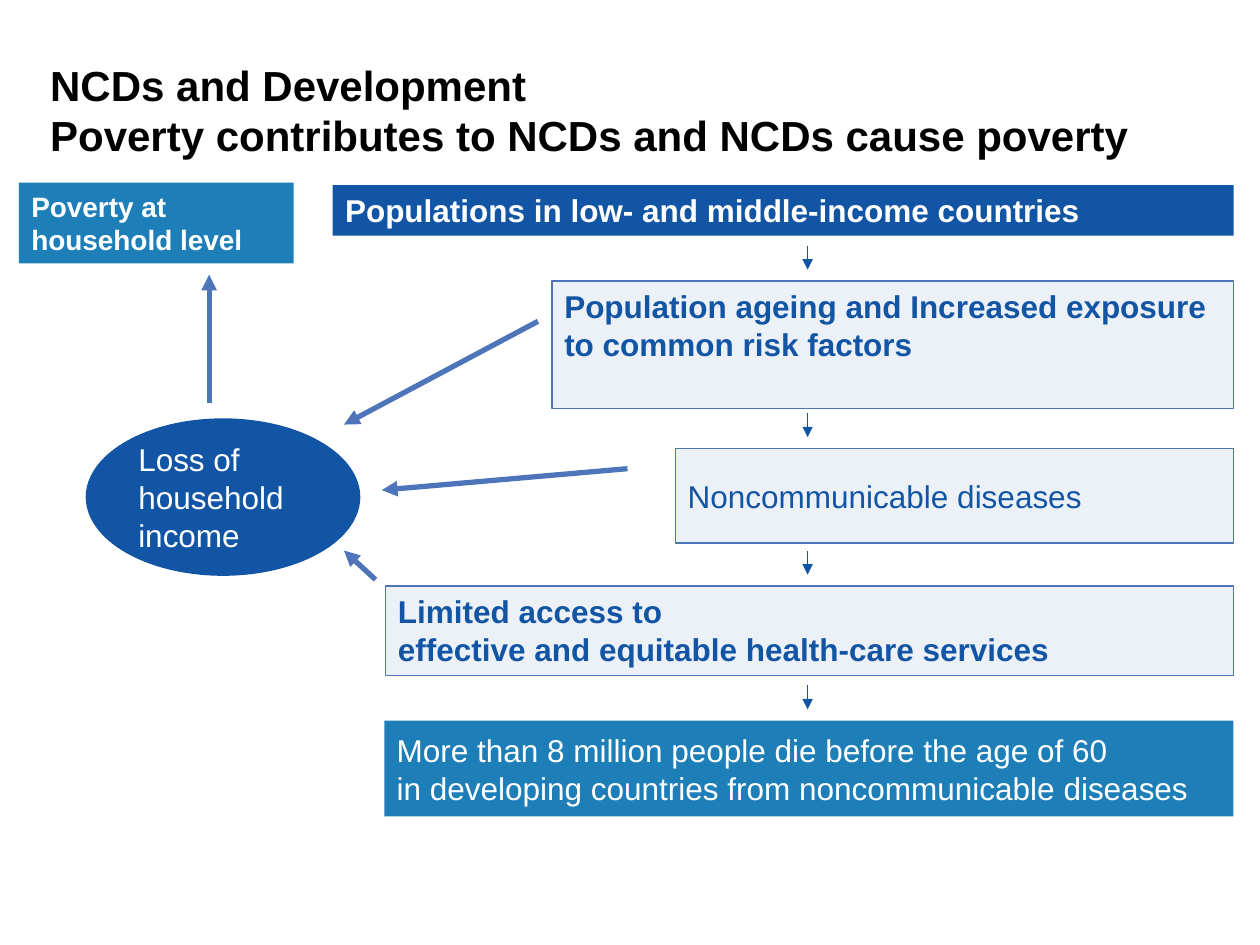
import pptx
import pptx.dml.color
import pptx.enum.shapes
import pptx.enum.text
import pptx.oxml.ns
import pptx.util
from lxml import etree

Inches = pptx.util.Inches
RGBColor = pptx.dml.color.RGBColor
Shape = pptx.enum.shapes.MSO_SHAPE
Anchor = pptx.enum.text.MSO_ANCHOR
Align = pptx.enum.text.PP_ALIGN
qn = pptx.oxml.ns.qn

WHITE = RGBColor(0xFF, 0xFF, 0xFF)
BLACK = RGBColor(0x00, 0x00, 0x00)
NAVY = RGBColor(0x12, 0x55, 0xA4)
TEAL = RGBColor(0x1E, 0x7F, 0xB8)
STEEL = RGBColor(0x4E, 0x75, 0xB9)


def write_text(frame, text, size, color, bold, anchor):
    """Fill a text frame with left-aligned text in one style."""
    frame.text = text
    frame.vertical_anchor = anchor
    for para in frame.paragraphs:
        para.alignment = Align.LEFT
        for span in para.runs:
            span.font.name = "Arial"
            span.font.size = pptx.util.Pt(size)
            span.font.bold = bold
            span.font.color.rgb = color


def add_box(page, box, text, fill, size=18, bold=False, anchor=Anchor.MIDDLE,
            kind=Shape.RECTANGLE):
    """Add a filled shape with text; a steel box is tinted and outlined."""
    shape = page.shapes.add_shape(kind, *map(Inches, box))
    shape.shadow.inherit = False
    shape.fill.solid()
    shape.fill.fore_color.rgb = fill
    tinted = fill == STEEL
    if tinted:
        shape.line.color.rgb = STEEL
        shape.line.width = pptx.util.Pt(0.75)
        color = shape._element.spPr.find(qn("a:solidFill"))[0]
        etree.SubElement(color, qn("a:alpha"), val="10000")
    else:
        shape.line.fill.background()
    shape.text_frame.word_wrap = True
    write_text(shape.text_frame, text, size, NAVY if tinted else WHITE, bold, anchor)


def add_arrow(page, start, end, color=STEEL, width=3):
    """Draw a straight arrow from start to end."""
    arrow = page.shapes.add_connector(
        pptx.enum.shapes.MSO_CONNECTOR.STRAIGHT, *map(Inches, start + end))
    arrow.line.color.rgb = color
    arrow.line.width = pptx.util.Pt(width)
    properties = arrow._element.spPr
    etree.SubElement(properties.find(qn("a:ln")), qn("a:tailEnd"), type="triangle")
    etree.SubElement(properties, qn("a:effectLst"))


def add_title(page, left, top, width, height):
    """Write the two-line heading."""
    title = page.shapes.add_textbox(*map(Inches, (left, top, width, height)))
    title.text_frame.word_wrap = False
    write_text(title.text_frame,
               "NCDs and Development\nPoverty contributes to NCDs and NCDs cause poverty",
               24, BLACK, True, Anchor.TOP)


def add_cascade(page, left, top, width):
    """Stack the right-aligned steps from populations to early deaths."""
    steps = [
        (0, 7.15, 0.4, "Populations in low- and middle-income countries",
         NAVY, True, Anchor.TOP),
        (0.76, 5.41, 1.01,
         "Population ageing and Increased exposure to common risk factors",
         STEEL, True, Anchor.TOP),
        (2.09, 4.43, 0.75, "Noncommunicable diseases", STEEL, False, Anchor.MIDDLE),
        (3.18, 6.73, 0.71,
         "Limited access to \veffective and equitable health-care services",
         STEEL, True, Anchor.TOP),
        (4.25, 6.74, 0.76,
         "More than 8 million people die before the age of 60\n"
         "in developing countries from noncommunicable diseases",
         TEAL, False, Anchor.MIDDLE),
    ]
    for index, (offset, step_width, height, text, fill, bold, anchor) in enumerate(steps):
        box = (left + width - step_width, top + offset, step_width, height)
        add_box(page, box, text, fill, bold=bold, anchor=anchor)
        if index:
            x, tip = left + 3.77, top + offset - 0.09
            add_arrow(page, (x, tip - 0.19), (x, tip), NAVY, 0.75)


def add_household(page, left, top, width):
    """Place the income loss ellipse and its arrow up to poverty."""
    add_box(page, (left, top, width, 0.64), "Poverty at household level",
            TEAL, 16, True)
    add_box(page, (left + 0.53, top + 1.87, width, 1.25), "Loss of household income",
            NAVY, kind=Shape.OVAL)
    add_arrow(page, (left + 1.51, top + 1.75), (left + 1.51, top + 0.73))


def add_income_links(page, left, top):
    """Point three cascade steps at the income loss ellipse."""
    for start, end in [((1.54, 0), (0, 0.82)), ((2.25, 1.17), (0.3, 1.34)),
                       ((0.25, 2.05), (0, 1.82))]:
        add_arrow(page, (left + start[0], top + start[1]), (left + end[0], top + end[1]))


def main():
    """Build and save the slide."""
    deck = pptx.Presentation()
    deck.slide_width, deck.slide_height = Inches(10), Inches(7.5)
    page = deck.slides.add_slide(deck.slide_layouts[6])
    add_title(page, 0.3, 0.42, 8.76, 0.9)
    add_cascade(page, 2.64, 1.47, 7.15)
    add_household(page, 0.15, 1.45, 2.18)
    add_income_links(page, 2.73, 2.55)
    deck.save("out.pptx")


if __name__ == "__main__":
    main()
